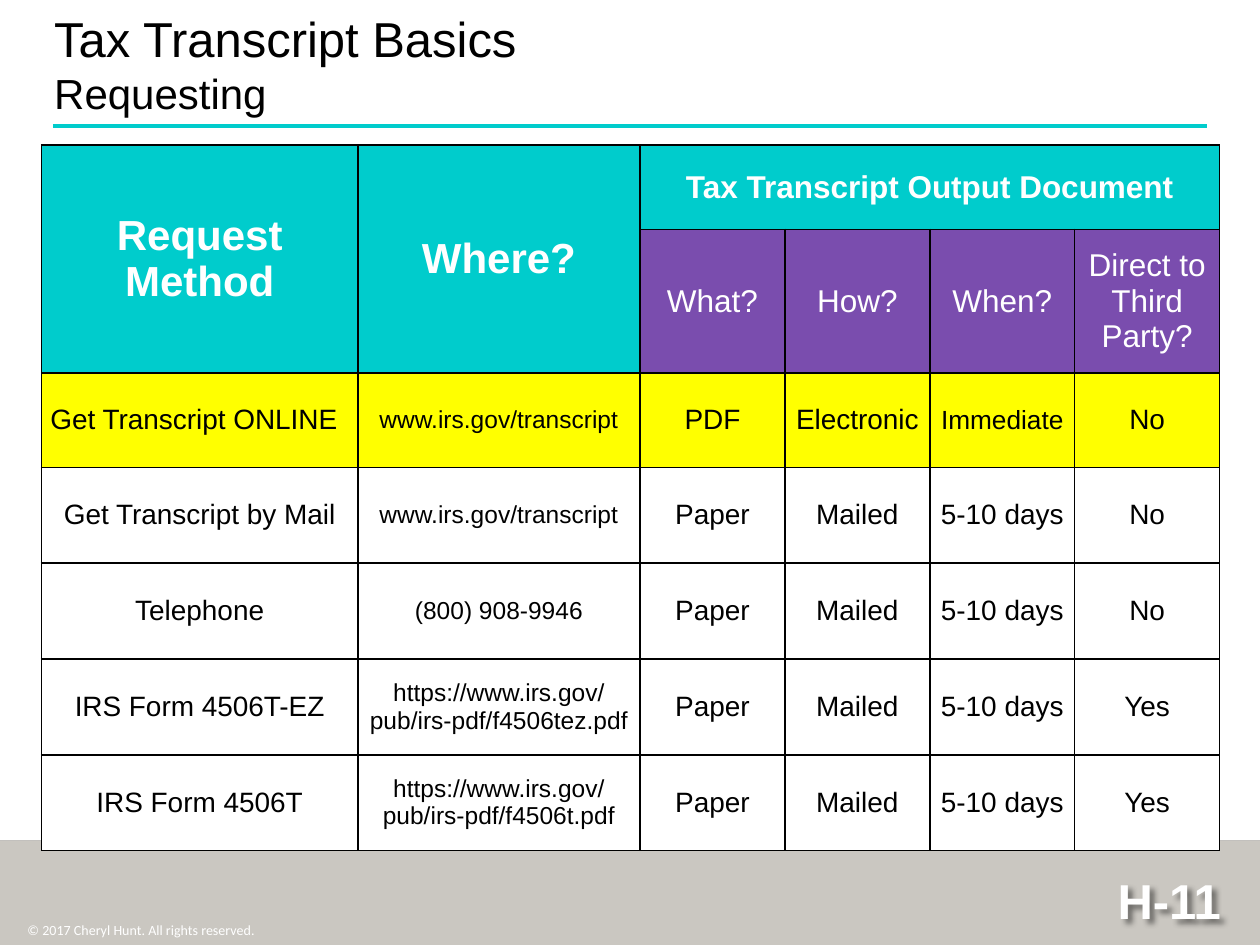
"""Build the Tax Transcript Basics slide comparing ways to request a transcript."""
from lxml import etree
from pptx import Presentation
from pptx.dml.color import RGBColor
from pptx.enum.shapes import MSO_CONNECTOR, MSO_SHAPE
from pptx.enum.text import MSO_ANCHOR, MSO_AUTO_SIZE, PP_ALIGN
from pptx.oxml import parse_xml
from pptx.oxml.ns import qn
from pptx.util import Inches, Pt

LEFT, CENTER, RIGHT = PP_ALIGN.LEFT, PP_ALIGN.CENTER, PP_ALIGN.RIGHT
MIDDLE, TOP = MSO_ANCHOR.MIDDLE, MSO_ANCHOR.TOP
NO_FIT = MSO_AUTO_SIZE.NONE
STRAIGHT, RECT = MSO_CONNECTOR.STRAIGHT, MSO_SHAPE.RECTANGLE

COLORS = {
    "teal": "00CCCC", "purple": "7A4DAE", "yellow": "FFFF00", "white": "FFFFFF",
    "black": "000000", "base": "CAC7C1", "edge": "A29F9A",
}
TITLE = [("Tax Transcript Basics", 28), ("Requesting", 24)]
MAIN_HEADS = ["Request Method", "Where?"]
GROUP_HEAD = "Tax Transcript Output Document"
SUB_HEADS = ["What?", "How?", "When?", "Direct to Third Party?"]
ONLINE = ["Get Transcript ONLINE", "www.irs.gov/transcript", "PDF", "Electronic", "Immediate", "No"]
ONLINE_SIZES = [16, 14, 16, 16, 15, 16]
BY_PAPER = ["Paper", "Mailed", "5-10 days"]
PAPER_METHODS = [
    ("Get Transcript by Mail", "www.irs.gov/transcript", "No"),
    ("Telephone", "(800) 908-9946", "No"),
    ("IRS Form 4506T-EZ", "https://www.irs.gov/pub/irs-pdf/f4506tez.pdf", "Yes"),
    ("IRS Form 4506T", "https://www.irs.gov/pub/irs-pdf/f4506t.pdf", "Yes"),
]
PAPER_SIZES = [16, 14, 16, 16, 16, 16]
COPYRIGHT = "© 2017 Cheryl Hunt. All rights reserved."
PAGE = "H-11"

COLS = [2.51, 2.24] + [1.15] * 4
HEAD_ROWS = [0.67, 1.14, 0.75]
TABLE_LEFT, TABLE_TOP = 0.33, 1.15
PAPER_TOP, ROW_H = 3.71, 0.76
SHADOW = (
    '<a:effectLst xmlns:a="http://schemas.openxmlformats.org/drawingml/2006/main">'
    '<a:outerShdw blurRad="38100" dist="38100" dir="2700000" algn="tl">'
    '<a:srgbClr val="000000"><a:alpha val="45000"/></a:srgbClr>'
    '</a:outerShdw></a:effectLst>'
)


def rgb(name):
    return RGBColor.from_string(COLORS[name])


def style(p, size, color="black", bold=False, font="Arial", align=CENTER):
    p.alignment = align
    for r in p.runs:
        r.font.name, r.font.size, r.font.bold = font, Pt(size), bold
        r.font.color.rgb = rgb(color)


def add_line(s, x1, x2, y, color, width):
    line = s.shapes.add_connector(STRAIGHT, Inches(x1), Inches(y), Inches(x2), Inches(y))
    line.line.color.rgb = rgb(color)
    line.line.width = Pt(width)
    etree.SubElement(line.element.spPr, qn("a:effectLst"))
    return line


def add_textbox(s, box, text, anchor):
    sp = s.shapes.add_textbox(*map(Inches, box))
    tf = sp.text_frame
    tf.text, tf.vertical_anchor = text, anchor
    return sp


def add_grid(s, top, rows):
    table = s.shapes.add_table(len(rows), len(COLS), Inches(TABLE_LEFT), Inches(top),
                               Inches(sum(COLS)), Inches(sum(rows))).table
    table.first_row = table.horz_banding = False
    for column, width in zip(table.columns, COLS):
        column.width = Inches(width)
    for row, height in zip(table.rows, rows):
        row.height = Inches(height)
    for cell in table.iter_cells():
        tcPr = cell._tc.get_or_add_tcPr()
        for side in ("lnL", "lnR", "lnT", "lnB"):
            ln = etree.SubElement(tcPr, qn(f"a:{side}"), w=str(Pt(1)))
            fill = etree.SubElement(ln, qn("a:solidFill"))
            etree.SubElement(fill, qn("a:srgbClr"), val=COLORS["black"])
    return table


def fill_cell(cell, text, size, fill, color="black", bold=False, align=CENTER):
    cell.fill.solid()
    cell.fill.fore_color.rgb = rgb(fill)
    cell.margin_left = cell.margin_right = Inches(0.07)
    cell.margin_top = cell.margin_bottom = 0
    cell.vertical_anchor = MIDDLE
    cell.text_frame.text = text
    style(cell.text_frame.paragraphs[0], size, color, bold, align=align)


def add_title(s):
    title = s.shapes.title
    title.left, title.top, title.width, title.height = map(Inches, (0.33, 0, 9.17, 1))
    tf = title.text_frame
    tf.text = "\n".join(text for text, _ in TITLE)
    tf.auto_size, tf.vertical_anchor = NO_FIT, MIDDLE
    for p, (_, size) in zip(tf.paragraphs, TITLE):
        style(p, size, align=LEFT)


def add_backdrop(s):
    s.background.fill.solid()
    s.background.fill.fore_color.rgb = rgb("base")
    edge = add_line(s, 0, 10, 6.67, "edge", 1)
    panel = s.shapes.add_shape(RECT, 0, 0, Inches(10), Inches(6.67))
    panel.shadow.inherit = False
    panel.fill.solid()
    panel.fill.fore_color.rgb = rgb("white")
    panel.line.fill.background()
    for sp in (edge, panel):
        s.shapes.title.element.addprevious(sp.element)


def add_tables(s):
    table = add_grid(s, TABLE_TOP, HEAD_ROWS)
    for c, text in enumerate(MAIN_HEADS):
        table.cell(0, c).merge(table.cell(1, c))
        fill_cell(table.cell(0, c), text, 24, "teal", "white", True)
    table.cell(0, 2).merge(table.cell(0, 5))
    fill_cell(table.cell(0, 2), GROUP_HEAD, 18, "teal", "white", True)
    for c, text in enumerate(SUB_HEADS, 2):
        fill_cell(table.cell(1, c), text, 18, "purple", "white")
    for c, (text, size) in enumerate(zip(ONLINE, ONLINE_SIZES)):
        fill_cell(table.cell(2, c), text, size, "yellow", align=CENTER if c else LEFT)
    for i, (method, where, direct) in enumerate(PAPER_METHODS):
        table = add_grid(s, PAPER_TOP + i * ROW_H, [ROW_H])
        for c, (text, size) in enumerate(zip([method, where, *BY_PAPER, direct], PAPER_SIZES)):
            fill_cell(table.cell(0, c), text, size, "white")


def add_footer(s):
    sp = add_textbox(s, (0.12, 7.25, 2.26, 0.25), COPYRIGHT, TOP)
    p = sp.text_frame.paragraphs[0]
    p.line_spacing = 1.1
    style(p, 8, "white", font="Calibri", align=LEFT)

    sp = add_textbox(s, (6.42, 6.86, 3.48, 0.57), PAGE, MIDDLE)
    sp.text_frame.word_wrap = True
    sp.text_frame.margin_right = Inches(0.21)
    style(sp.text_frame.paragraphs[0], 28, "white", True, align=RIGHT)
    sp.element.spPr.append(parse_xml(SHADOW))


def main():
    prs = Presentation()
    prs.slide_width, prs.slide_height = Inches(10), Inches(7.5)
    s = prs.slides.add_slide(prs.slide_layouts[5])
    add_title(s)
    add_backdrop(s)
    add_line(s, 0.42, 9.58, 1, "teal", 2.5)
    add_tables(s)
    add_footer(s)
    prs.save("out.pptx")


if __name__ == "__main__":
    main()
